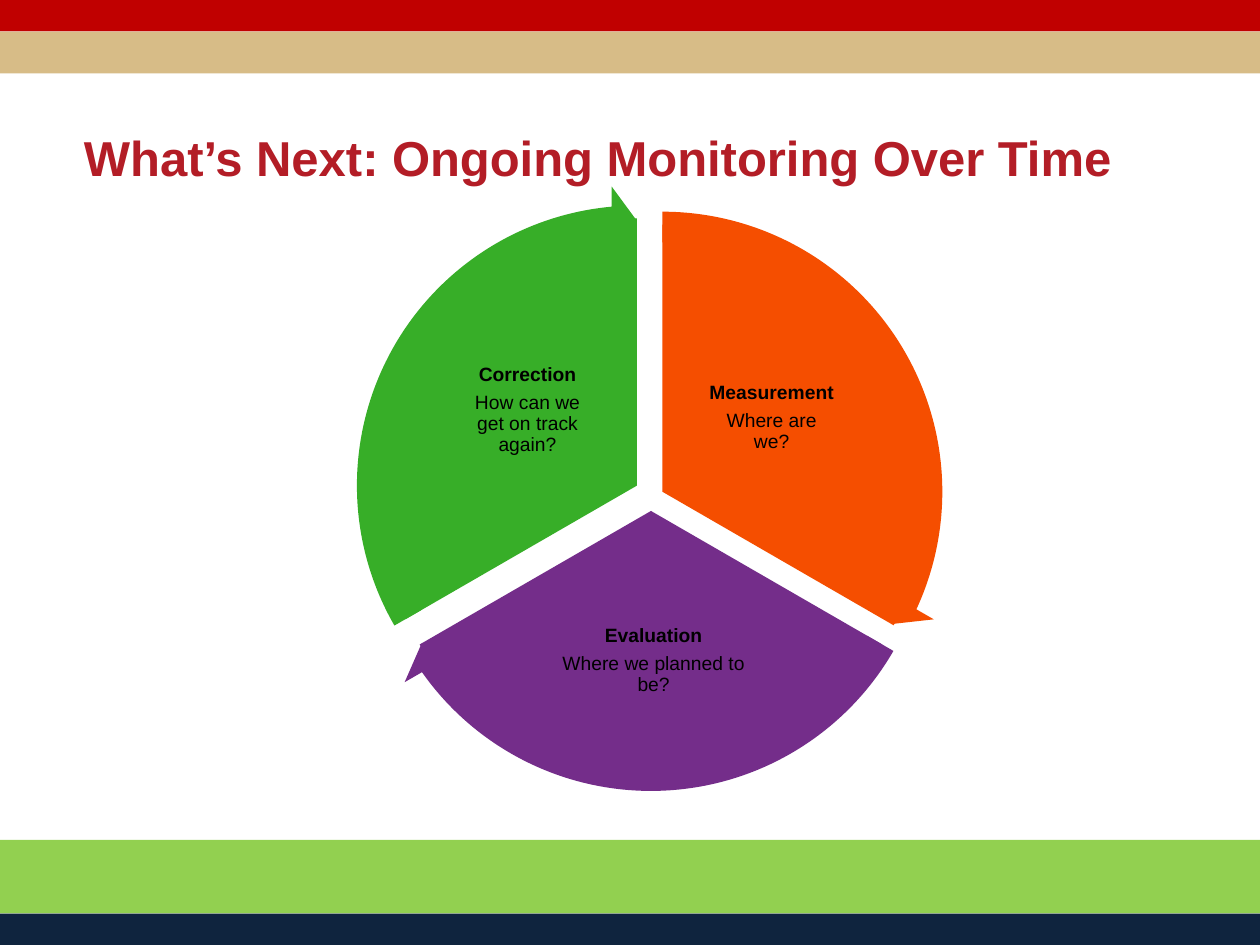
from dataclasses import dataclass

from pptx import Presentation
from pptx.dml.color import RGBColor as RGB
from pptx.enum.shapes import MSO_SHAPE as Form
from pptx.enum.text import MSO_ANCHOR as Anchor, MSO_AUTO_SIZE as Fit, PP_ALIGN as Align
from pptx.util import Pt


@dataclass(frozen=True)
class Theme:
    font: str = "Arial"
    title: str = "B31D26"
    ink: str = "000000"
    red: str = "C00000"
    tan: str = "D7BC87"
    lime: str = "92D050"
    navy: str = "0F243E"
    orange: str = "F54E00"
    purple: str = "742D8A"
    green: str = "37AE28"
    head: float = 28
    label: float = 11


THEME = Theme()
WIDTH, HEIGHT = 720, 540

# Angles are in the unit of the shape adjustments: 0.6 to a degree.
TURN = 216
TOP = 162
TIP = 3.275

# Colour, heading, question, pie centre, label centre, label size;
# centres are measured from the middle of the wheel.
STEPS = [
    (THEME.orange, "Measurement", "Where are we?",
     (7, -2.5), (69.5, -45), (77, 64)),
    (THEME.purple, "Evaluation", "Where we planned to be?",
     (0.5, 8.5), (2, 94), (115, 56)),
    (THEME.green, "Correction", "How can we get on track again?",
     (-7.5, -6), (-70, -49), (77, 64)),
]


def around(x, y, wide, high):
    """Return the box of the given size centred on a point."""
    return [Pt(v) for v in (x - wide / 2, y - high / 2, wide, high)]


def add_form(slide, form, box, color, adjust=()):
    shape = slide.shapes.add_shape(form, *box)
    shape.shadow.inherit = False
    shape.fill.solid()
    shape.fill.fore_color.rgb = RGB.from_string(color)
    shape.line.fill.background()
    for i, value in enumerate(adjust):
        shape.adjustments[i] = value


def set_font(font, size, color, bold):
    font.name = THEME.font
    font.size = Pt(size)
    font.bold = bold
    font.color.rgb = RGB.from_string(color)


def set_frame(frame, anchor, side, edge):
    frame.word_wrap = True
    frame.auto_size = Fit.NONE
    frame.vertical_anchor = anchor
    frame.margin_left = frame.margin_right = Pt(side)
    frame.margin_top = frame.margin_bottom = Pt(edge)


def add_bands(slide, top, bands):
    """Stack full-width bands downward from top."""
    for high, color in bands:
        add_form(slide, Form.RECTANGLE, (0, Pt(top), Pt(WIDTH), Pt(high)), color)
        top += high


def add_title(slide, text, left, top, wide, high):
    title = slide.shapes.title
    title.left, title.top, title.width, title.height = map(Pt, (left, top, wide, high))
    frame = title.text_frame
    frame.text = text
    set_frame(frame, Anchor.TOP, 0, 3.6)
    para = frame.paragraphs[0]
    para.alignment = Align.LEFT
    para.line_spacing = 0.9
    set_font(para.runs[0].font, THEME.head, THEME.title, True)


def add_label(slide, box, lines):
    """Write a bold heading with plain lines below it."""
    frame = slide.shapes.add_textbox(*box).text_frame
    frame.text = "\n".join(lines)
    set_frame(frame, Anchor.MIDDLE, 1.4, 1.4)
    for i, para in enumerate(frame.paragraphs):
        para.alignment = Align.CENTER
        para.line_spacing = 0.9
        para.space_after = Pt(4.3)
        set_font(para.runs[0].font, THEME.label, THEME.ink, i == 0)


def add_wheel(slide, left, top, size):
    """Draw the cycle as pies, each with an arrow along its rim."""
    x, y = left + size / 2, top + size / 2
    disc, ring = size * 0.89, size
    sweep = TURN / len(STEPS)
    for i, (color, head, ask, hub, spot, area) in enumerate(STEPS):
        start = (TOP + i * sweep) % TURN
        stop = (start + sweep) % TURN
        mid = x + hub[0], y + hub[1]
        add_form(slide, Form.PIE, around(*mid, disc, disc), color, (start, stop))
        add_form(slide, Form.CIRCULAR_ARROW, around(*mid, ring, ring), color,
                 (0.051, TIP, stop - TIP, start, 0.059))
        add_label(slide, around(x + spot[0], y + spot[1], *area), (head, ask))


def main():
    deck = Presentation()
    deck.slide_width, deck.slide_height = Pt(WIDTH), Pt(HEIGHT)
    slide = deck.slides.add_slide(deck.slide_layouts[5])
    add_bands(slide, 0, [(18, THEME.red), (24, THEME.tan)])
    add_bands(slide, 480, [(42, THEME.lime), (18, THEME.navy)])
    add_title(slide, "What’s Next: Ongoing Monitoring Over Time", 48, 73, 621, 78)
    add_wheel(slide, 200, 112, 343)
    deck.save("out.pptx")


if __name__ == "__main__":
    main()
